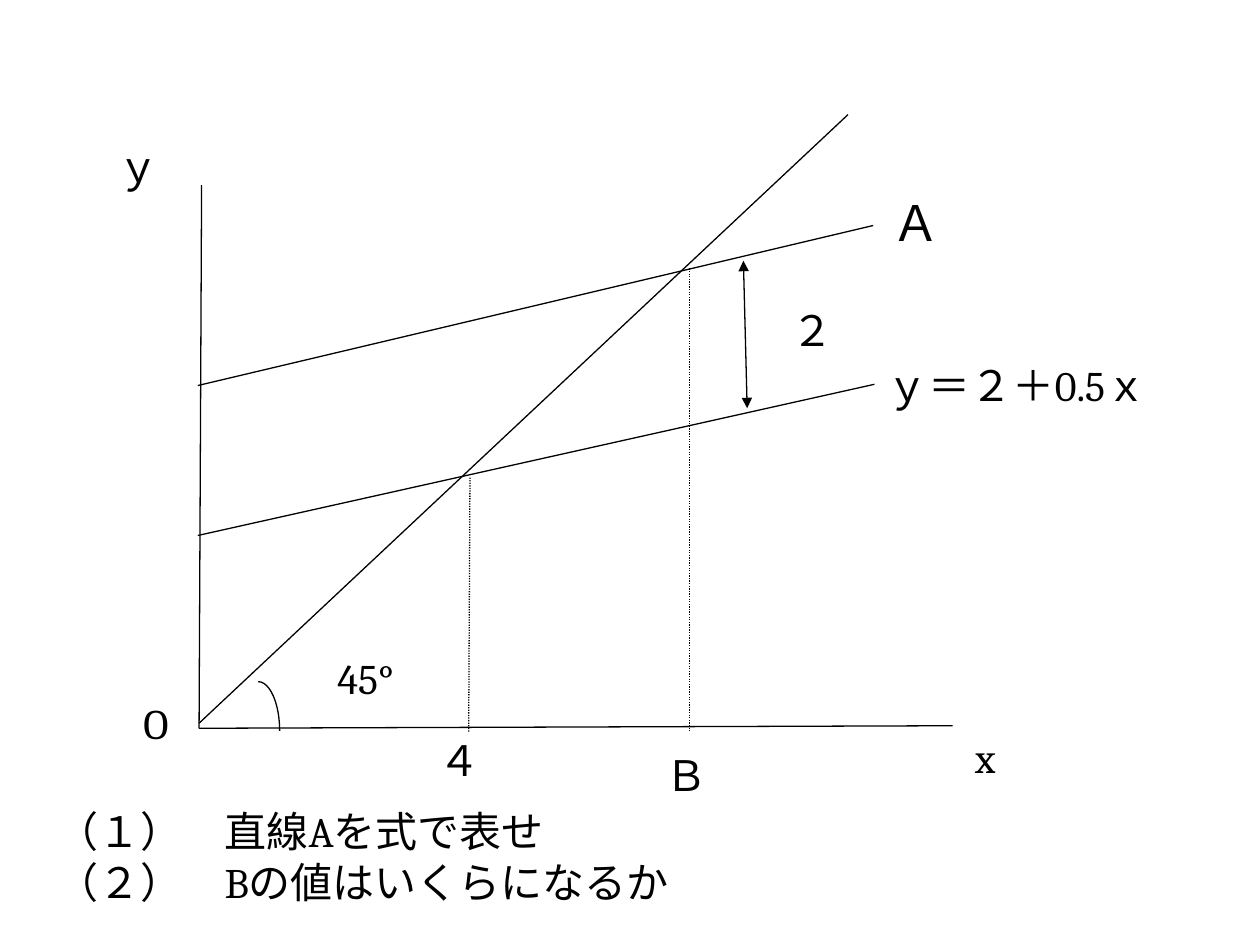
from lxml.etree import SubElement
from pptx import Presentation
from pptx.dml.color import RGBColor
from pptx.enum.dml import MSO_LINE
from pptx.enum.shapes import MSO_CONNECTOR, MSO_SHAPE
from pptx.enum.text import MSO_ANCHOR
from pptx.oxml.ns import qn
from pptx.util import Inches, Pt

BLACK = "000000"
LATIN = "Cambria"
JAPANESE = "Noto Sans CJK JP"

LINES = [
    ((1.6, 1.47), (1.58, 5.78)),   # y axis
    ((1.58, 5.78), (7.56, 5.76)),  # x axis
    ((1.58, 5.74), (6.73, 0.91)),  # 45 degree line
    ((1.57, 4.25), (6.94, 3.05)),  # y = 2 + 0.5x
    ((1.57, 3.06), (6.93, 1.79)),  # line A
]
DROP_LINES = [
    ((3.73, 3.79), (3.72, 5.81)),
    ((5.47, 2.13), (5.47, 5.8)),
]
LABELS = [
    ("45°", 2.58, 5.13, 1.23, 0.38),
    ("x", 7.64, 5.76, 0.88, 0.38),
    ("２", 6.18, 2.37, 0.5, 0.5),
    ("Ｂ", 5.18, 5.9, 0.76, 0.57),
    ("O", 1.04, 5.49, 0.5, 0.5),
    ("ｙ＝２＋0.5ｘ", 6.94, 2.8, 2.52, 0.62),
]
QUESTIONS = ["（１）\u3000直線Aを式で表せ", "（２）\u3000Bの値はいくらになるか"]


def color(value):
    return RGBColor.from_string(value)


def style_line(line):
    line.color.rgb = color(BLACK)
    line.width = Pt(0.75)


def add_line(slide, start, end, dash=None, arrows=False):
    sp = slide.shapes.add_connector(
        MSO_CONNECTOR.STRAIGHT, *(Inches(v) for v in (*start, *end)))
    style_line(sp.line)
    if dash:
        sp.line.dash_style = dash
    if arrows:
        for tag in ("a:headEnd", "a:tailEnd"):
            SubElement(sp.line._get_or_add_ln(), qn(tag), type="triangle")
    SubElement(sp._element.spPr, qn("a:effectLst"))
    return sp


def add_run(p, text, size, font):
    r = p.add_run()
    r.text = text
    r.font.size = Pt(size)
    r.font.name = font
    r.font.color.rgb = color(BLACK)
    SubElement(r._r.get_or_add_rPr(), qn("a:ea"), typeface=JAPANESE)


def add_text(slide, lines, left, top, width, height, size=24, font=LATIN):
    sp = slide.shapes.add_textbox(*(Inches(v) for v in (left, top, width, height)))
    tf = sp.text_frame
    tf.word_wrap = True
    for i, text in enumerate(lines):
        p = tf.add_paragraph() if i else tf.paragraphs[0]
        add_run(p, text, size, font)
    return tf


def add_angle_mark(slide, center_x, center_y, radius_x, radius_y):
    """Draw the upper right quarter of an ellipse."""
    sp = slide.shapes.add_shape(
        MSO_SHAPE.ARC, Inches(center_x - radius_x), Inches(center_y - radius_y),
        Inches(2 * radius_x), Inches(2 * radius_y))
    sp.shadow.inherit = False
    sp.fill.background()
    style_line(sp.line)


def main():
    prs = Presentation()
    prs.slide_width, prs.slide_height = Inches(10), Inches(7.5)
    slide = prs.slides.add_slide(prs.slide_layouts[6])

    for start, end in LINES:
        add_line(slide, start, end)
    for start, end in DROP_LINES:
        add_line(slide, start, end, dash=MSO_LINE.ROUND_DOT)
    add_line(slide, (5.9, 2.07), (5.93, 3.24), arrows=True)
    add_angle_mark(slide, 2.05, 5.8, 0.17, 0.39)

    for text, *box in LABELS:
        add_text(slide, [text], *box)
    add_text(slide, ["Ａ"], 6.98, 1.48, 0.73, 0.62, size=28)

    tf = add_text(slide, ["ｙ"], 0.59, 1.13, 0.75, 0.54)
    tf._txBody.bodyPr.set("vert", "eaVert")

    tf = add_text(slide, ["４"], 3.4, 5.82, 0.67, 0.38, font=JAPANESE)
    tf.margin_left = tf.margin_right = Inches(0.08)
    tf.margin_top = tf.margin_bottom = Inches(0.01)

    tf = add_text(slide, QUESTIONS, 0.35, 6.24, 6.41, 1.01)
    tf.vertical_anchor = MSO_ANCHOR.MIDDLE
    tf.margin_top = Inches(0.15)

    prs.save("out.pptx")


if __name__ == "__main__":
    main()
